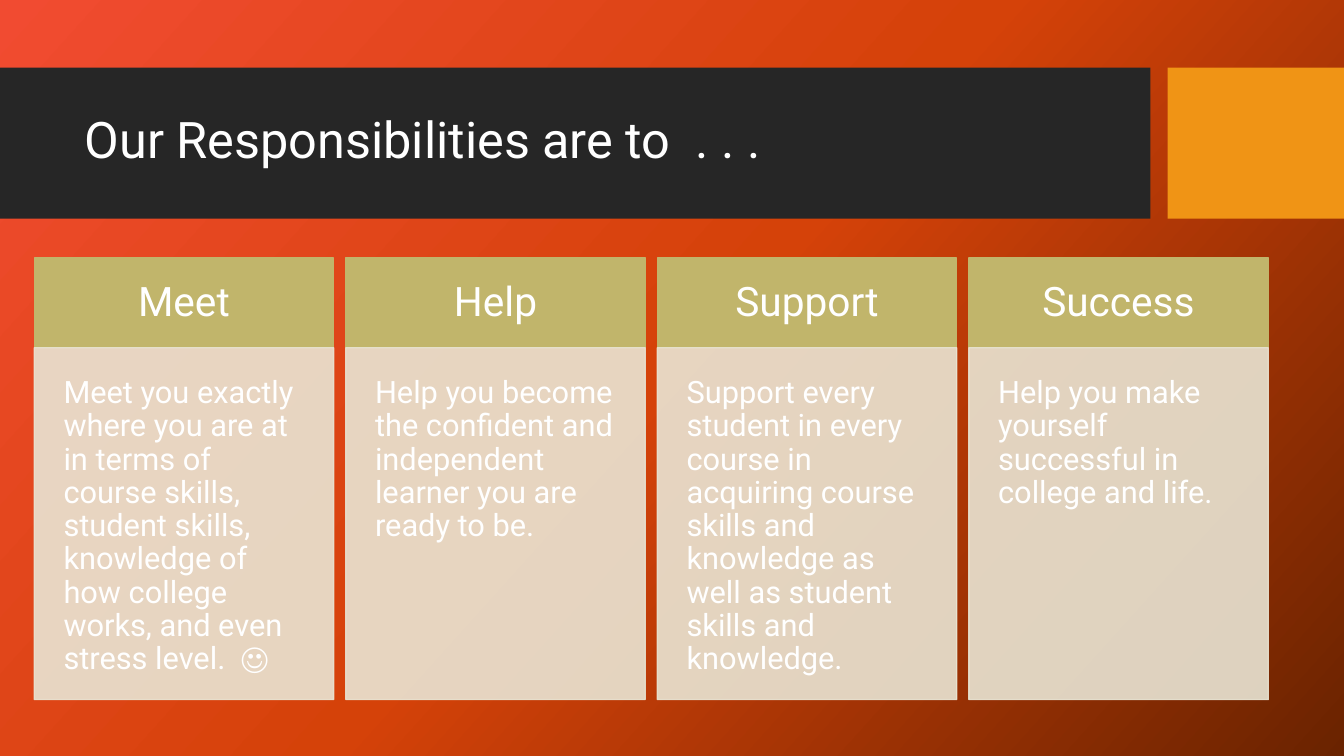
"""Build a slide with four cards describing the responsibilities of a student support team."""
from copy import deepcopy

from pptx import Presentation
from pptx.dml.color import RGBColor
from pptx.enum.shapes import MSO_SHAPE
from pptx.enum.text import MSO_ANCHOR, MSO_AUTO_SIZE, PP_ALIGN
from pptx.oxml.ns import qn
from pptx.oxml.xmlchemy import OxmlElement
from pptx.util import Inches, Pt

RECTANGLE = MSO_SHAPE.RECTANGLE
TOP, MIDDLE = MSO_ANCHOR.TOP, MSO_ANCHOR.MIDDLE
LEFT, CENTER = PP_ALIGN.LEFT, PP_ALIGN.CENTER
NO_AUTOFIT = MSO_AUTO_SIZE.NONE

TITLE = "Our Responsibilities are to  . . ."
CARDS = [
    ("Meet", "Meet you exactly where you are at in terms of course skills, student skills, "
             "knowledge of how college works, and even stress level.  ☺"),
    ("Help", "Help you become the confident and independent learner you are ready to be."),
    ("Support", "Support every student in every course in acquiring course skills and "
                "knowledge as well as student skills and knowledge."),
    ("Success", "Help you make yourself successful in college and life."),
]

FONT = "Roboto"
COLORS = {"banner": "262626", "accent": "F09415", "header": "C1B56B",
          "body": "E9E5D4", "text": "FFFFFF"}
BACKGROUND_STOPS = [(0, "F14B31"), (0.5, "D54209"), (1, "6A2300")]
BACKGROUND_ANGLE = 318
BODY_OPACITY = 90

SLIDE_WIDTH, SLIDE_HEIGHT = 13.33, 7.5
BANNER_TOP, BANNER_HEIGHT = 0.67, 1.5
BANNER_WIDTH, ACCENT_LEFT = 11.41, 11.58
TITLE_BOX = (0.74, 0.82, 10.51, 1.18)
GRID_LEFT, GRID_TOP = 0.34, 2.56
CARD_WIDTH, CARD_PITCH = 2.97, 3.09
HEADER_HEIGHT, BODY_HEIGHT = 0.89, 3.49


def color(name):
    return RGBColor.from_string(COLORS[name])


def paint_background(slide):
    fill = slide.background.fill
    fill.gradient()
    fill.gradient_angle = BACKGROUND_ANGLE
    stop_list = next(slide.element.iter(qn("a:gsLst")))
    stop_list.insert(1, deepcopy(stop_list[0]))
    for stop, (position, value) in zip(fill.gradient_stops, BACKGROUND_STOPS):
        stop.position = position
        stop.color.rgb = RGBColor.from_string(value)


def add_rectangle(slide, box, fill_name, outlined=False):
    shape = slide.shapes.add_shape(RECTANGLE, *map(Inches, box))
    shape.shadow.inherit = False
    shape.fill.solid()
    shape.fill.fore_color.rgb = color(fill_name)
    if outlined:
        shape.line.color.rgb = color(fill_name)
        shape.line.width = Pt(1)
    else:
        shape.line.fill.background()
    return shape


def set_opacity(shape, percent):
    for color_element in shape.element.spPr.iter(qn("a:srgbClr")):
        alpha = OxmlElement("a:alpha")
        alpha.set("val", str(percent * 1000))
        color_element.append(alpha)


def write(shape, text, size, alignment, anchor, inset=None, space_after=0):
    frame = shape.text_frame
    frame.word_wrap = True
    frame.auto_size = NO_AUTOFIT
    frame.vertical_anchor = anchor
    if inset is not None:
        frame.margin_left = frame.margin_right = Inches(inset)
        frame.margin_top = frame.margin_bottom = Inches(inset)
    paragraph = frame.paragraphs[0]
    paragraph.alignment = alignment
    paragraph.line_spacing = 0.9
    paragraph.space_before = Pt(0)
    paragraph.space_after = Pt(space_after)
    run = paragraph.add_run()
    run.text = text
    run.font.name = FONT
    run.font.size = Pt(size)
    run.font.color.rgb = color("text")


def add_title(slide):
    add_rectangle(slide, (0, BANNER_TOP, BANNER_WIDTH, BANNER_HEIGHT), "banner")
    accent_width = SLIDE_WIDTH - ACCENT_LEFT
    add_rectangle(slide, (ACCENT_LEFT, BANNER_TOP, accent_width, BANNER_HEIGHT), "accent")
    title = slide.shapes.title
    title.left, title.top, title.width, title.height = map(Inches, TITLE_BOX)
    write(title, TITLE, 36, LEFT, MIDDLE)
    slide.shapes.element.append(title.element)


def add_card(slide, column, heading, description):
    left = GRID_LEFT + column * CARD_PITCH
    header = add_rectangle(slide, (left, GRID_TOP, CARD_WIDTH, HEADER_HEIGHT), "header", True)
    write(header, heading, 29, CENTER, MIDDLE, 0.23, 10)
    body_top = GRID_TOP + HEADER_HEIGHT
    body = add_rectangle(slide, (left, body_top, CARD_WIDTH, BODY_HEIGHT), "body", True)
    set_opacity(body, BODY_OPACITY)
    write(body, description, 22, LEFT, TOP, 0.29, 8)


def main():
    presentation = Presentation()
    presentation.slide_width = Inches(SLIDE_WIDTH)
    presentation.slide_height = Inches(SLIDE_HEIGHT)
    slide = presentation.slides.add_slide(presentation.slide_layouts.get_by_name("Title Only"))
    paint_background(slide)
    add_title(slide)
    for column, (heading, description) in enumerate(CARDS):
        add_card(slide, column, heading, description)
    presentation.save("out.pptx")


if __name__ == "__main__":
    main()
